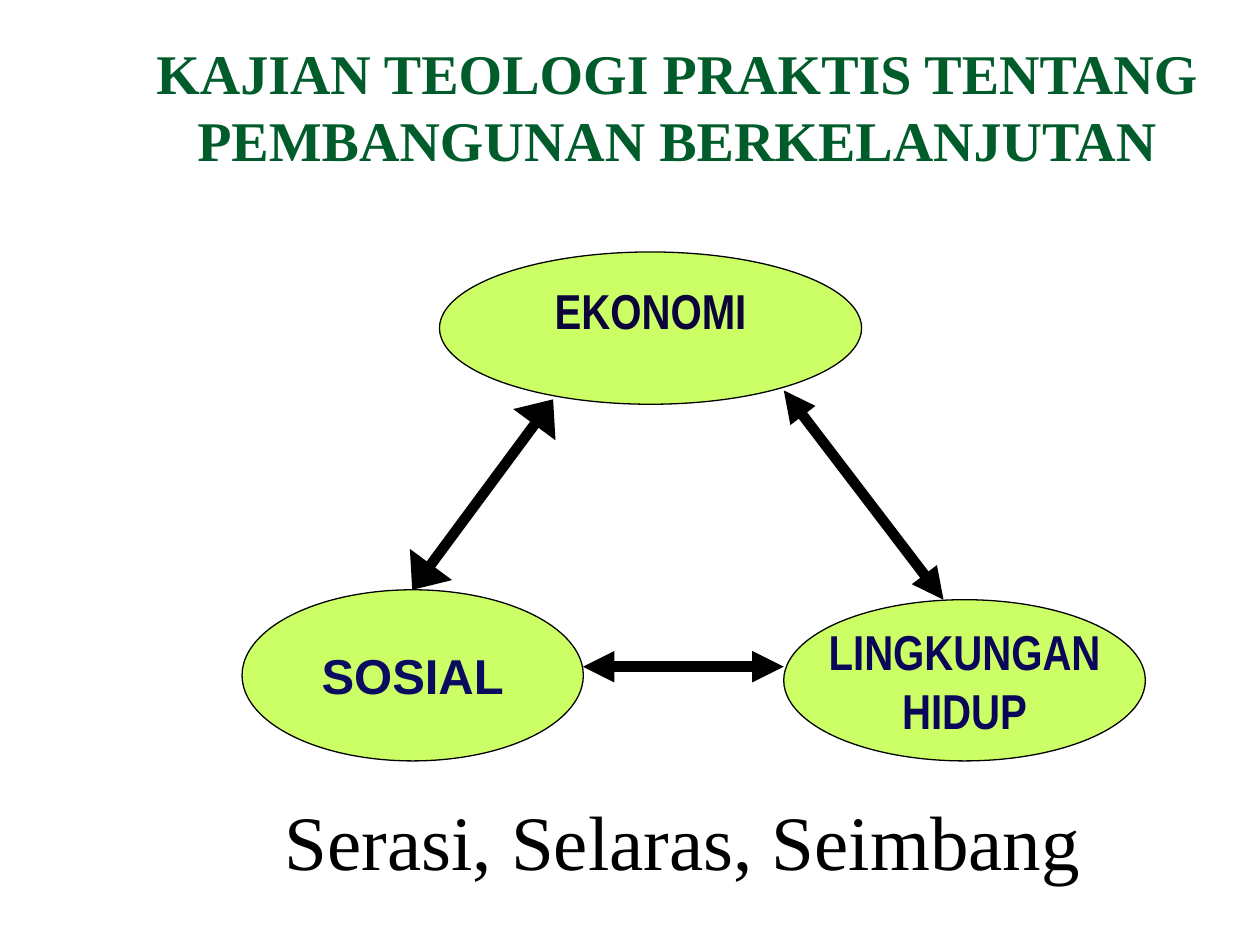
"""Build the slide on the three linked pillars of sustainable development."""
from dataclasses import dataclass

from lxml import etree
from pptx import Presentation
from pptx.dml.color import RGBColor
from pptx.enum.shapes import MSO_CONNECTOR, MSO_SHAPE
from pptx.enum.text import MSO_ANCHOR, PP_ALIGN
from pptx.oxml.ns import qn
from pptx.util import Cm, Pt

OVAL = MSO_SHAPE.OVAL
LINE = MSO_CONNECTOR.STRAIGHT
TOP, MIDDLE = MSO_ANCHOR.TOP, MSO_ANCHOR.MIDDLE
CENTER = PP_ALIGN.CENTER

BLACK = RGBColor(0x00, 0x00, 0x00)
GREEN = RGBColor(0x00, 0x5C, 0x2A)
LIME = RGBColor(0xCC, 0xFF, 0x66)
NAVY = RGBColor(0x0A, 0x06, 0x58)
INDIGO = RGBColor(0x0A, 0x0C, 0x60)
DARK = RGBColor(0x0A, 0x04, 0x3A)

SERIF, SANS, NARROW = "Times New Roman", "Arial", "Arial Narrow"


@dataclass
class Label:
    """Text with its box in centimetres and its look."""
    lines: list[str]
    box: tuple[float, float, float, float]
    font: str
    size: int
    color: RGBColor
    bold: bool = True
    anchor: MSO_ANCHOR = MIDDLE
    wrap: bool = True


@dataclass
class Arrow:
    """Two-headed arrow between two points in centimetres."""
    start: tuple[float, float]
    end: tuple[float, float]
    head: str = "med"


TITLE = Label(["KAJIAN TEOLOGI PRAKTIS TENTANG PEMBANGUNAN BERKELANJUTAN"],
              (2.54, 1.07, 22.23, 2.11), SERIF, 32, GREEN)
MOTTO = Label(["Serasi, Selaras, Seimbang"], (2.97, 15.88, 21.59, 1.7),
              SERIF, 44, BLACK, bold=False, anchor=TOP)
OVALS = [
    Label(["LINGKUNGAN", "HIDUP"], (15.8, 12.09, 7.29, 3.25),
          NARROW, 28, NAVY, wrap=False),
    Label(["SOSIAL"], (4.88, 11.89, 6.88, 3.45), SANS, 28, INDIGO, wrap=False),
    Label(["EKONOMI"], (8.86, 5.08, 8.51, 3.07), NARROW, 28, DARK, anchor=TOP),
]
ARROWS = [
    Arrow((11.15, 8.05), (8.31, 11.89), "lg"),
    Arrow((15.8, 7.87), (19.02, 12.09)),
    Arrow((11.75, 13.44), (15.8, 13.44)),
]


def assign(target: object, values: dict) -> None:
    """Set each named attribute on the target."""
    for name, value in values.items():
        setattr(target, name, value)


def write(shape, label: Label) -> None:
    """Fill the shape with the label's lines."""
    frame = shape.text_frame
    assign(frame, {"text": "\n".join(label.lines), "word_wrap": label.wrap,
                   "vertical_anchor": label.anchor})
    for para in frame.paragraphs:
        para.alignment = CENTER
        assign(para.font, {"name": label.font, "size": Pt(label.size),
                           "bold": label.bold})
        para.font.color.rgb = label.color


def add_text(slide, label: Label) -> None:
    """Add a plain text box."""
    write(slide.shapes.add_textbox(*map(Cm, label.box)), label)


def add_oval(slide, label: Label) -> None:
    """Add a filled oval with its text."""
    oval = slide.shapes.add_shape(OVAL, *map(Cm, label.box))
    oval.shadow.inherit = False
    oval.fill.solid()
    oval.fill.fore_color.rgb = LIME
    oval.line.color.rgb = BLACK
    oval.line.width = Pt(0.75)
    write(oval, label)


def add_arrow(slide, arrow: Arrow) -> None:
    """Add a thick line with a head at both ends."""
    link = slide.shapes.add_connector(LINE, *map(Cm, arrow.start + arrow.end))
    link.line.color.rgb = BLACK
    link.line.width = Pt(6)
    props = link.line._get_or_add_ln()
    for tag in ("a:headEnd", "a:tailEnd"):
        etree.SubElement(props, qn(tag), type="triangle", w=arrow.head, len="med")
    etree.SubElement(link._element.spPr, qn("a:effectLst"))


def main() -> None:
    """Draw the slide and save it."""
    deck = Presentation()
    assign(deck, {"slide_width": Cm(25.4), "slide_height": Cm(19.05)})
    slide = deck.slides.add_slide(deck.slide_layouts[6])
    add_text(slide, TITLE)
    for label in OVALS:
        add_oval(slide, label)
    for arrow in ARROWS:
        add_arrow(slide, arrow)
    add_text(slide, MOTTO)
    deck.save("out.pptx")


if __name__ == "__main__":
    main()
